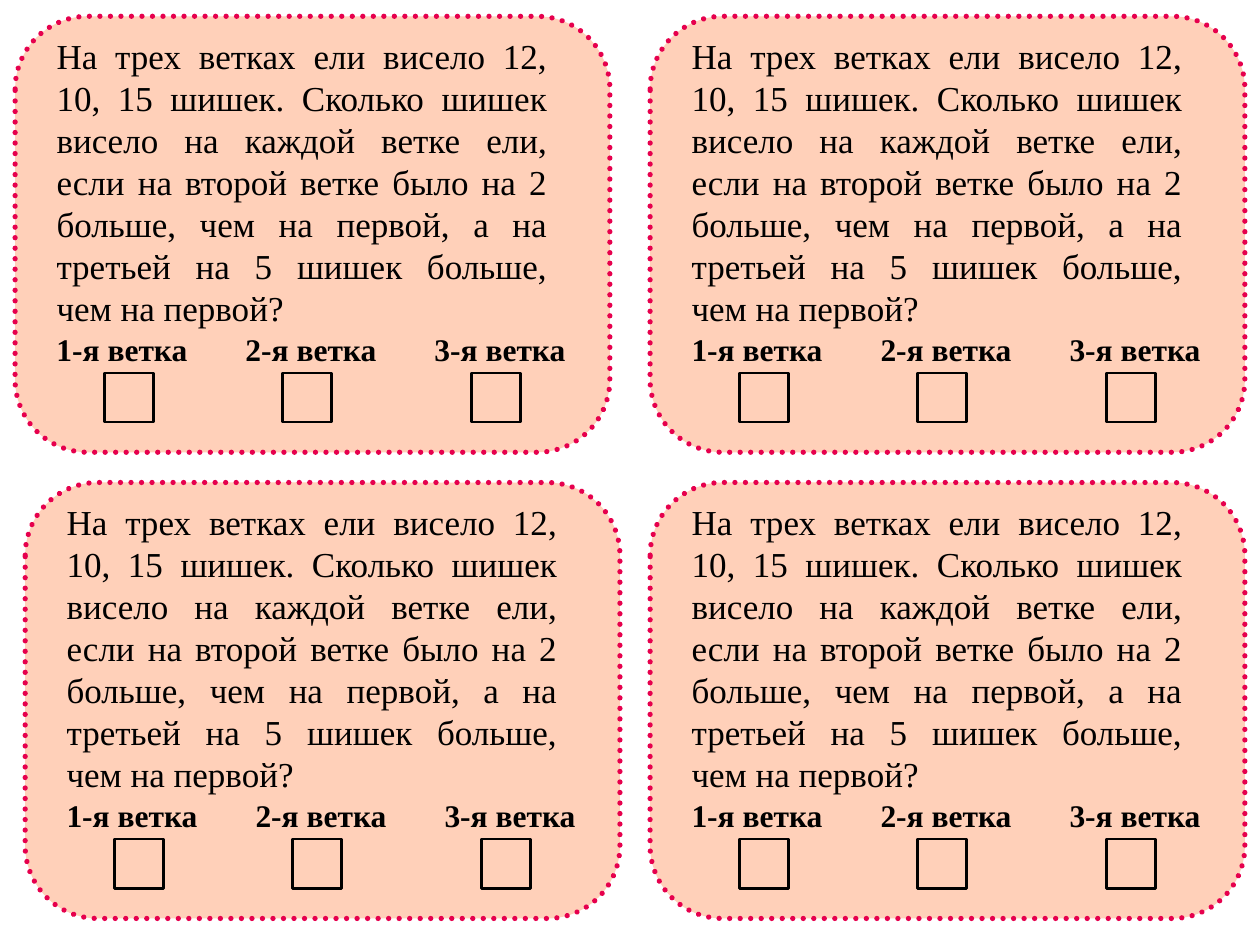
"""Builds a slide with four copies of a word problem card about fir cones."""
from pptx import Presentation
from pptx.dml.color import RGBColor
from pptx.enum.dml import MSO_LINE
from pptx.enum.shapes import MSO_SHAPE as Shape
from pptx.enum.text import MSO_ANCHOR as Anchor, MSO_AUTO_SIZE as AutoSize, PP_ALIGN as Align
from pptx.oxml.ns import qn
from pptx.util import Inches, Pt

COLORS = {"card": "FFD0B9", "border": "E6004D", "ink": "000000"}
FONT = "Times New Roman"
PROBLEM = (
    "На трех ветках ели висело 12, 10, 15 шишек. Сколько шишек висело на каждой ветке ели, "
    "если на второй ветке было на 2 больше, чем на первой, а на третьей на 5 шишек больше, "
    "чем на первой?"
)
BRANCHES = ["1-я ветка", "2-я ветка", "3-я ветка"]
BOX_OFFSETS = [0.71, 2.12, 3.62]
CARD_CORNERS = [(0.12, 0.13), (5.16, 0.13), (0.2, 3.83), (5.16, 3.83)]


def format_text(frame, text, size, bold=False, align=Align.LEFT, anchor=Anchor.TOP):
    frame.word_wrap = True
    frame.auto_size = AutoSize.SHAPE_TO_FIT_TEXT
    frame.vertical_anchor = anchor
    paragraph = frame.paragraphs[0]
    paragraph.alignment = align
    run = paragraph.add_run()
    run.text = text
    run.font.name = FONT
    run.font.size = Pt(size)
    run.font.bold = bold
    run.font.color.rgb = RGBColor.from_string(COLORS["ink"])


class CardSlide:
    def __init__(self, slide):
        self.shapes = slide.shapes

    def outline(self, preset, left, top, width, height, color, weight):
        shape = self.shapes.add_shape(
            preset, Inches(left), Inches(top), Inches(width), Inches(height)
        )
        shape.shadow.inherit = False
        shape.fill.background()
        shape.line.color.rgb = RGBColor.from_string(COLORS[color])
        shape.line.width = Pt(weight)
        return shape

    def background(self, left, top):
        shape = self.outline(Shape.ROUNDED_RECTANGLE, left, top, 4.72, 3.46, "border", 3)
        shape.fill.solid()
        shape.fill.fore_color.rgb = RGBColor.from_string(COLORS["card"])
        shape.line.dash_style = MSO_LINE.ROUND_DOT
        shape.element.spPr.find(qn("a:ln")).set("cap", "rnd")

    def answer_box(self, left, top):
        self.outline(Shape.RECTANGLE, left, top, 0.39, 0.39, "ink", 1.5)

    def text(self, left, top, width, height, text, **style):
        box = self.shapes.add_textbox(Inches(left), Inches(top), Inches(width), Inches(height))
        format_text(box.text_frame, text, **style)

    def card(self, left, top):
        self.background(left, top)
        self.text(left + 0.23, top + 0.08, 4.09, 2.46, PROBLEM,
                  size=20, align=Align.JUSTIFY, anchor=Anchor.MIDDLE)
        for index, branch in enumerate(BRANCHES):
            self.text(left + 0.23 + 1.5 * index, top + 2.44, 1.34, 0.4, branch,
                      size=18, bold=True)
        for offset in BOX_OFFSETS:
            self.answer_box(left + offset, top + 2.83)


def main():
    presentation = Presentation()
    presentation.slide_width = Inches(10)
    presentation.slide_height = Inches(7.5)
    cards = CardSlide(presentation.slides.add_slide(presentation.slide_layouts[6]))
    for left, top in CARD_CORNERS:
        cards.card(left, top)
    presentation.save("out.pptx")


if __name__ == "__main__":
    main()
